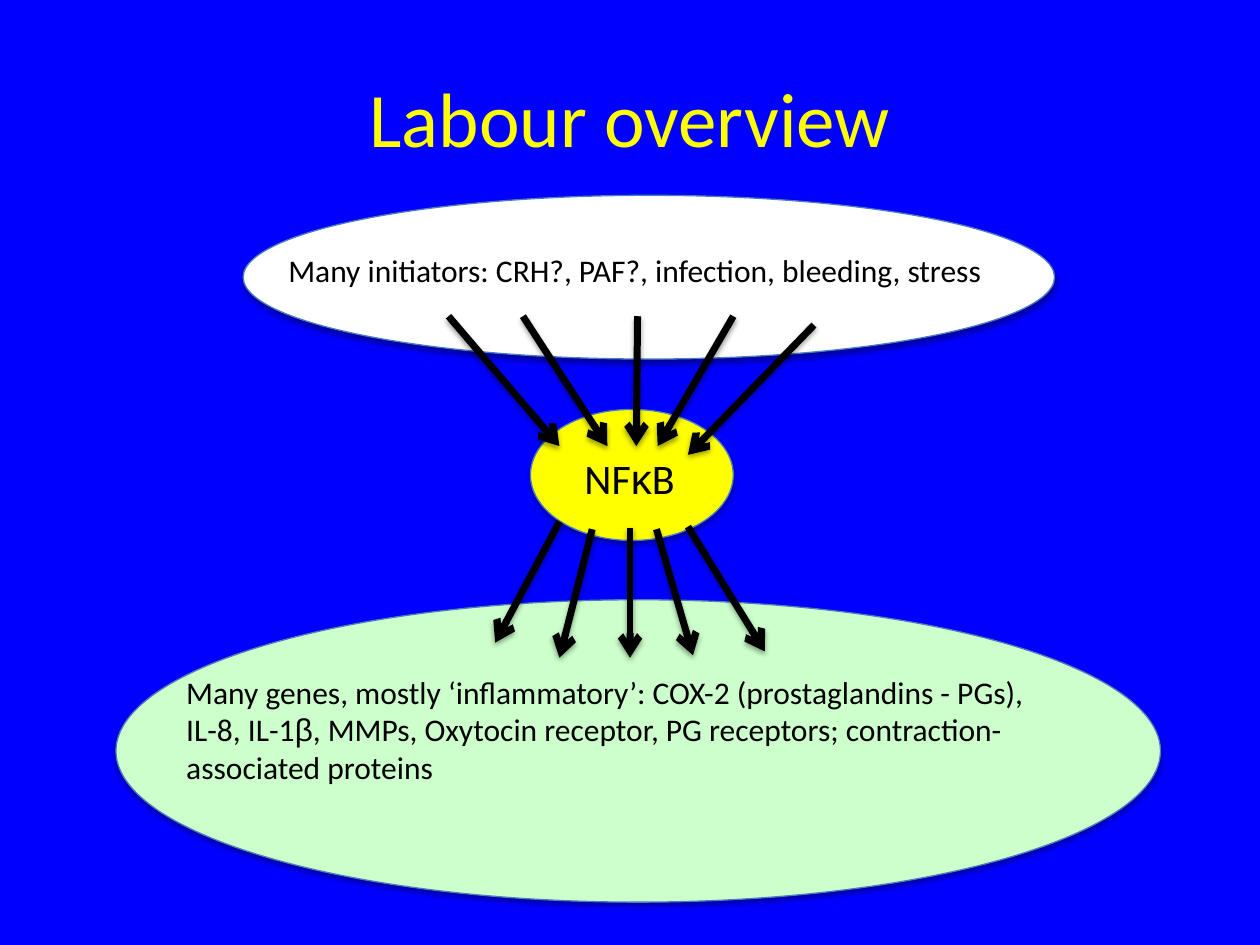
from lxml.etree import SubElement
from pptx import Presentation
from pptx.dml.color import RGBColor
from pptx.enum.shapes import MSO_CONNECTOR, MSO_SHAPE
from pptx.enum.text import MSO_ANCHOR, MSO_AUTO_SIZE, PP_ALIGN
from pptx.oxml.ns import qn
from pptx.util import Inches, Pt

BLUE = RGBColor(0x00, 0x00, 0xFF)
YELLOW = RGBColor(0xFF, 0xFF, 0x00)
WHITE = RGBColor(0xFF, 0xFF, 0xFF)
GREEN = RGBColor(0xCC, 0xFF, 0xCC)
BLACK = RGBColor(0x00, 0x00, 0x00)
OUTLINE = RGBColor(0x4B, 0x7E, 0xBC)

WIDTH, HEIGHT = 10, 7.5
TITLE_BOX = (0.05, 0.04, 0.9, 1 / 6)

# Left, top, width and height as shares of the slide, then the fill
ELLIPSES = [
    ((0.193, 0.2067, 0.644, 0.1733), WHITE),
    ((0.421, 0.4333, 0.161, 0.1387), YELLOW),
    ((0.092, 0.6347, 0.829, 0.32), GREEN),
]

# Box as shares of the slide, text size, runs of (text, font)
LABELS = [
    ((0.219, 0.2587, 0.593, 0.0533), 18,
     [("Many initiators: CRH?, PAF?, infection, bleeding, stress", "Calibri")]),
    ((0.454, 0.472, 0.101, 0.0667), 24,
     [("NF", "Calibri"), ("κ", "Arial"), ("B", "Calibri")]),
    ((0.138, 0.7053, 0.7, 0.1347), 18,
     [("Many genes, mostly ‘inflammatory’: COX-2 (prostaglandins - PGs), IL-8, IL-1", "Calibri"),
      ("β", "Arial"),
      (", MMPs, Oxytocin receptor, PG receptors; contraction-associated proteins", "Calibri")]),
]

# Start and end points in inches
ARROWS_IN = [
    ((3.56, 2.51), (4.44, 3.54)),
    ((4.15, 2.51), (4.82, 3.54)),
    ((5.06, 2.51), (5.05, 3.54)),
    ((5.82, 2.51), (5.22, 3.54)),
    ((6.46, 2.58), (5.46, 3.61)),
]
ARROWS_OUT = [
    ((5, 4.19), (5, 5.22)),
    ((5.21, 4.2), (5.5, 5.2)),
    ((5.46, 4.18), (6.07, 5.17)),
    ((4.7, 4.2), (4.44, 5.22)),
    ((4.44, 4.14), (3.93, 5.1)),
]


def to_lengths(box):
    """Turn shares of the slide into lengths."""
    return [Inches(share * side) for share, side in zip(box, (WIDTH, HEIGHT) * 2)]


def set_format(target, values):
    for name, value in values.items():
        setattr(target, name, value)


def add_run(paragraph, text, font, size, color):
    run = paragraph.add_run()
    run.text = text
    set_format(run.font, {"name": font, "size": Pt(size)})
    run.font.color.rgb = color


def set_line(shape, color, width):
    shape.line.color.rgb = color
    shape.line.width = Pt(width)


def add_shadow(shape, distance, opacity):
    """Cast a soft black shadow straight down; call after the line is set."""
    effects = SubElement(shape._element.spPr, qn("a:effectLst"))
    shadow = SubElement(effects, qn("a:outerShdw"), blurRad=str(Pt(3.1)),
                        dist=str(Pt(distance)), dir="5400000", rotWithShape="0")
    color = SubElement(shadow, qn("a:srgbClr"), val=str(BLACK))
    SubElement(color, qn("a:alpha"), val=str(opacity * 1000))


def add_title(slide, text):
    title = slide.shapes.title
    set_format(title, dict(zip(("left", "top", "width", "height"), to_lengths(TITLE_BOX))))
    title.text_frame.vertical_anchor = MSO_ANCHOR.MIDDLE
    paragraph = title.text_frame.paragraphs[0]
    paragraph.alignment = PP_ALIGN.CENTER
    add_run(paragraph, text, "Calibri", 44, YELLOW)


def add_ellipse(slide, box, fill):
    ellipse = slide.shapes.add_shape(MSO_SHAPE.OVAL, *to_lengths(box))
    ellipse.fill.solid()
    ellipse.fill.fore_color.rgb = fill
    set_line(ellipse, OUTLINE, 0.75)
    add_shadow(ellipse, 1.8, 35)


def add_label(slide, box, size, runs):
    frame = slide.shapes.add_textbox(*to_lengths(box)).text_frame
    set_format(frame, {"word_wrap": True, "auto_size": MSO_AUTO_SIZE.SHAPE_TO_FIT_TEXT})
    for text, font in runs:
        add_run(frame.paragraphs[0], text, font, size, BLACK)


def add_arrow(slide, start, end):
    points = [Inches(value) for value in start + end]
    arrow = slide.shapes.add_connector(MSO_CONNECTOR.STRAIGHT, *points)
    set_line(arrow, BLACK, 4)
    SubElement(arrow._element.spPr.find(qn("a:ln")), qn("a:tailEnd"), type="arrow")
    add_shadow(arrow, 1.6, 38)


def main():
    presentation = Presentation()
    set_format(presentation, {"slide_width": Inches(WIDTH), "slide_height": Inches(HEIGHT)})
    slide = presentation.slides.add_slide(presentation.slide_layouts[5])
    slide.background.fill.solid()
    slide.background.fill.fore_color.rgb = BLUE

    add_title(slide, "Labour overview")
    for box, fill in ELLIPSES:
        add_ellipse(slide, box, fill)
    for box, size, runs in LABELS:
        add_label(slide, box, size, runs)
    for start, end in ARROWS_IN + ARROWS_OUT:
        add_arrow(slide, start, end)
    presentation.save("out.pptx")


if __name__ == "__main__":
    main()
